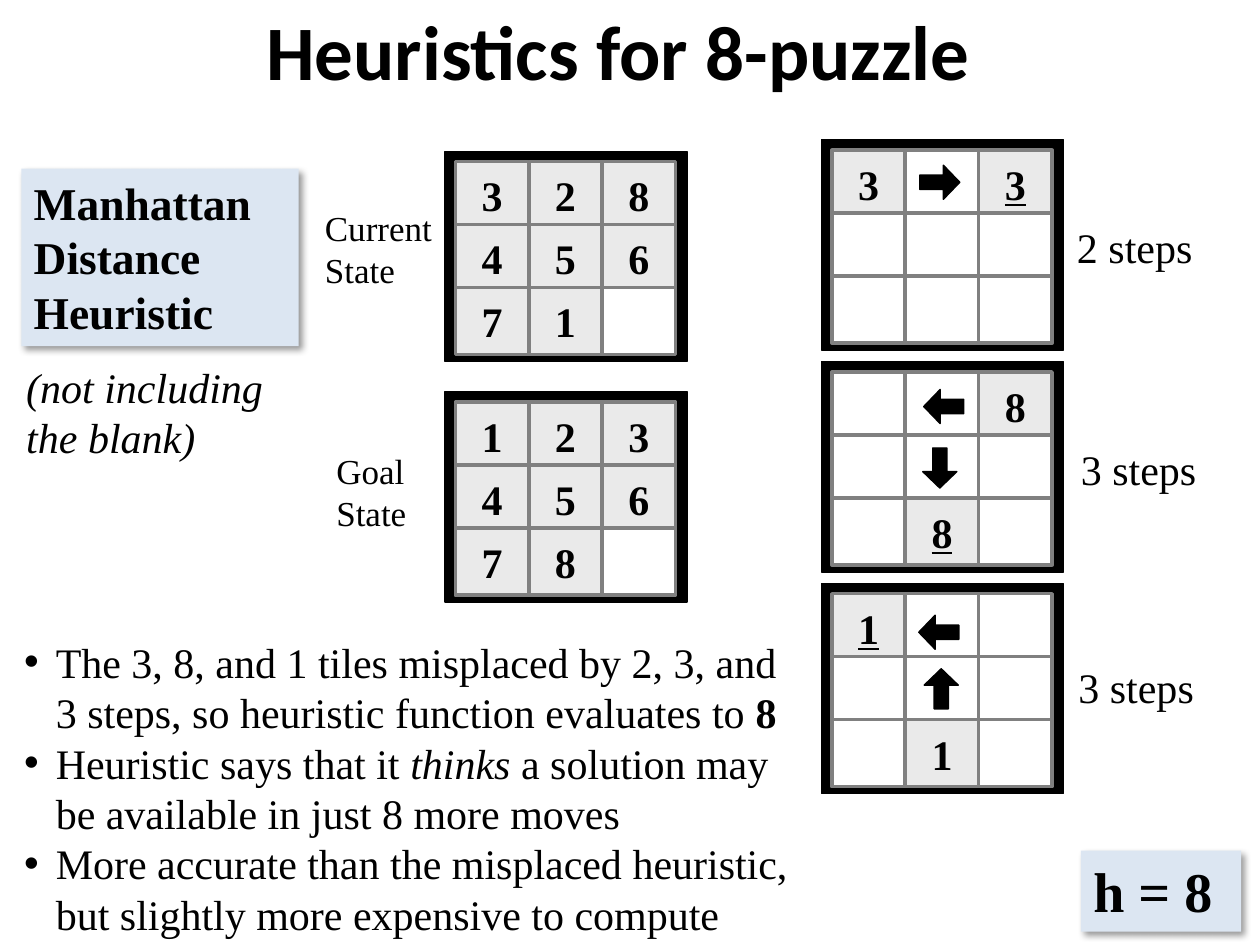
"""Builds the slide that explains the Manhattan distance heuristic for the 8-puzzle."""
from lxml import etree
from pptx import Presentation
from pptx.dml.color import RGBColor
from pptx.enum.shapes import MSO_SHAPE as Preset
from pptx.enum.text import MSO_ANCHOR as Anchor, MSO_AUTO_SIZE as AutoSize, PP_ALIGN as Align
from pptx.oxml import parse_xml
from pptx.oxml.ns import nsdecls, qn
from pptx.util import Cm, Pt

BLACK = RGBColor(0x00, 0x00, 0x00)
WHITE = RGBColor(0xFF, 0xFF, 0xFF)
TILE_GREY = RGBColor(0xEA, 0xEA, 0xEA)
GRID_GREY = RGBColor(0x80, 0x80, 0x80)
PALE_BLUE = RGBColor(0xDC, 0xE6, 0xF2)

RIGHT, DOWN, LEFT, UP = 0, 90, 180, 270


class PuzzleSlide:
    heading_font = "Calibri"
    text_font = "Times New Roman"
    board_size = (4.88, 4.24)
    tile_size = (1.48, 1.35)
    tile_pitch = (1.48, 1.27)
    board_margin = 0.21
    arrow_size = (0.81, 0.69)

    def __init__(self, deck):
        self.slide = deck.slides.add_slide(deck.slide_layouts[1])
        self.shapes = self.slide.shapes

    def place(self, shape, left, top, width, height):
        shape.left, shape.top = Cm(left), Cm(top)
        shape.width, shape.height = Cm(width), Cm(height)

    def add_runs(self, paragraph, runs, size, font=None):
        for wording, style in runs:
            run = paragraph.add_run()
            run.text = wording
            run.font.name = font or self.text_font
            run.font.size = Pt(size)
            run.font.color.rgb = BLACK
            run.font.bold = "b" in style
            run.font.italic = "i" in style
            run.font.underline = "u" in style

    def title(self, wording, box):
        heading = self.shapes.title
        self.place(heading, *box)
        frame = heading.text_frame
        frame.auto_size = AutoSize.NONE
        frame.vertical_anchor = Anchor.MIDDLE
        frame.paragraphs[0].alignment = Align.CENTER
        self.add_runs(frame.paragraphs[0], [(wording, "b")], 44, self.heading_font)

    def bullets(self, points, box):
        body = self.slide.placeholders[1]
        self.place(body, *box)
        frame = body.text_frame
        frame.auto_size = AutoSize.NONE
        for index, runs in enumerate(points):
            point = frame.add_paragraph() if index else frame.paragraphs[0]
            point.space_before = Pt(0)
            self.add_runs(point, runs, 24)
            properties = point._p.get_or_add_pPr()
            properties.set("marL", str(Cm(0.64)))
            properties.set("indent", str(Cm(-0.64)))
            etree.SubElement(properties, qn("a:buChar")).set("char", "•")

    def label(self, lines, box, size, style="", wrap=True):
        frame = self.shapes.add_textbox(*map(Cm, box)).text_frame
        self.fill_label(frame, lines, size, style, wrap)

    def fill_label(self, frame, lines, size, style, wrap):
        frame.word_wrap = wrap
        frame.auto_size = AutoSize.SHAPE_TO_FIT_TEXT
        for index, line in enumerate(lines):
            paragraph = frame.add_paragraph() if index else frame.paragraphs[0]
            paragraph.alignment = Align.LEFT
            self.add_runs(paragraph, [(line, style)], size)

    def panel(self, lines, box, size, wrap=True):
        card = self.shapes.add_shape(Preset.RECTANGLE, *map(Cm, box))
        card.fill.solid()
        card.fill.fore_color.rgb = PALE_BLUE
        card.line.fill.background()
        card._element.spPr.append(parse_xml(
            f'<a:effectLst {nsdecls("a")}><a:outerShdw blurRad="{Pt(4)}" dist="{Pt(3)}" '
            'dir="2700000" algn="tl" rotWithShape="0"><a:srgbClr val="000000">'
            '<a:alpha val="40000"/></a:srgbClr></a:outerShdw></a:effectLst>'))
        card.text_frame.vertical_anchor = Anchor.TOP
        self.fill_label(card.text_frame, lines, size, "b", wrap)

    def solid(self, shapes, preset, box, fill, line, line_width):
        shape = shapes.add_shape(preset, *map(Cm, box))
        shape.shadow.inherit = False
        shape.fill.solid()
        shape.fill.fore_color.rgb = fill
        shape.line.color.rgb = line
        shape.line.width = Pt(line_width)
        return shape

    def board(self, left, top, rows, target=None):
        shapes = self.shapes.add_group_shape().shapes
        self.solid(shapes, Preset.RECTANGLE, (left, top, *self.board_size), BLACK, BLACK, 0.75)
        for row, digits in enumerate(rows):
            for column, digit in enumerate(digits):
                corner = (left + self.board_margin + column * self.tile_pitch[0],
                          top + self.board_margin + row * self.tile_pitch[1])
                blank = digit == "_"
                tile = self.solid(shapes, Preset.RECTANGLE, (*corner, *self.tile_size),
                                  WHITE if blank else TILE_GREY, GRID_GREY, 2)
                if not blank:
                    frame = tile.text_frame
                    frame.vertical_anchor = Anchor.MIDDLE
                    frame.paragraphs[0].alignment = Align.CENTER
                    style = "bu" if (row, column) == target else "b"
                    self.add_runs(frame.paragraphs[0], [(digit, style)], 24)

    def arrow(self, left, top, direction):
        box = (left, top, *self.arrow_size)
        move = self.solid(self.shapes, Preset.RIGHT_ARROW, box, BLACK, BLACK, 0.75)
        move.adjustments[0], move.adjustments[1] = 0.42, 0.48
        move.rotation = direction


def main():
    deck = Presentation()
    deck.slide_width, deck.slide_height = Cm(25.4), Cm(19.05)
    page = PuzzleSlide(deck)

    page.title("Heuristics for 8-puzzle ", (1.85, -0.58, 21.59, 3.18))
    page.panel(["Manhattan Distance", "Heuristic"], (0.43, 3.4, 5.59, 3.58), 26)
    page.bullets([
        [("The 3, 8, and 1 tiles misplaced by 2, 3, and 3 steps, "
          "so heuristic function evaluates to ", ""), ("8", "b")],
        [("Heuristic says that it ", ""), ("thinks", "i"),
         (" a solution may be available in just 8 more moves", "")],
        [("More accurate than the misplaced heuristic, "
          "but slightly more expensive to compute", "")],
    ], (0.23, 12.7, 16.08, 6.4))

    page.board(8.97, 3.05, ("328", "456", "71_"))
    page.board(8.97, 7.9, ("123", "456", "78_"))
    page.label(["Goal State"], (6.53, 8.94, 2.95, 1.96), 20)
    page.label(["Current State"], (6.3, 4.04, 3.3, 1.96), 20)

    routes = [
        (("3_3", "___", "___"), (0, 2), [(18.54, 3.33, RIGHT)], "2 steps", (21.46, 4.34)),
        (("__8", "___", "_8_"), (2, 1), [(18.62, 7.85, LEFT), (18.54, 9.09, DOWN)],
         "3 steps", (21.54, 8.81)),
        (("1__", "___", "_1_"), (0, 0), [(18.57, 13.54, UP), (18.52, 12.4, LEFT)],
         "3 steps", (21.49, 13.21)),
    ]
    for index, (rows, target, moves, steps, steps_corner) in enumerate(routes):
        page.board(16.56, 2.82 + index * 4.47, rows, target)
        for move in moves:
            page.arrow(*move)
        page.label([steps], (*steps_corner, 2.87, 1.27), 24, wrap=False)

    page.panel(["h = 8"], (21.79, 17.15, 3.23, 1.63), 32, wrap=False)
    page.label(["(not including the blank)"], (0.28, 7.16, 5.94, 2.31), 24, "i")
    deck.save("out.pptx")


if __name__ == "__main__":
    main()
